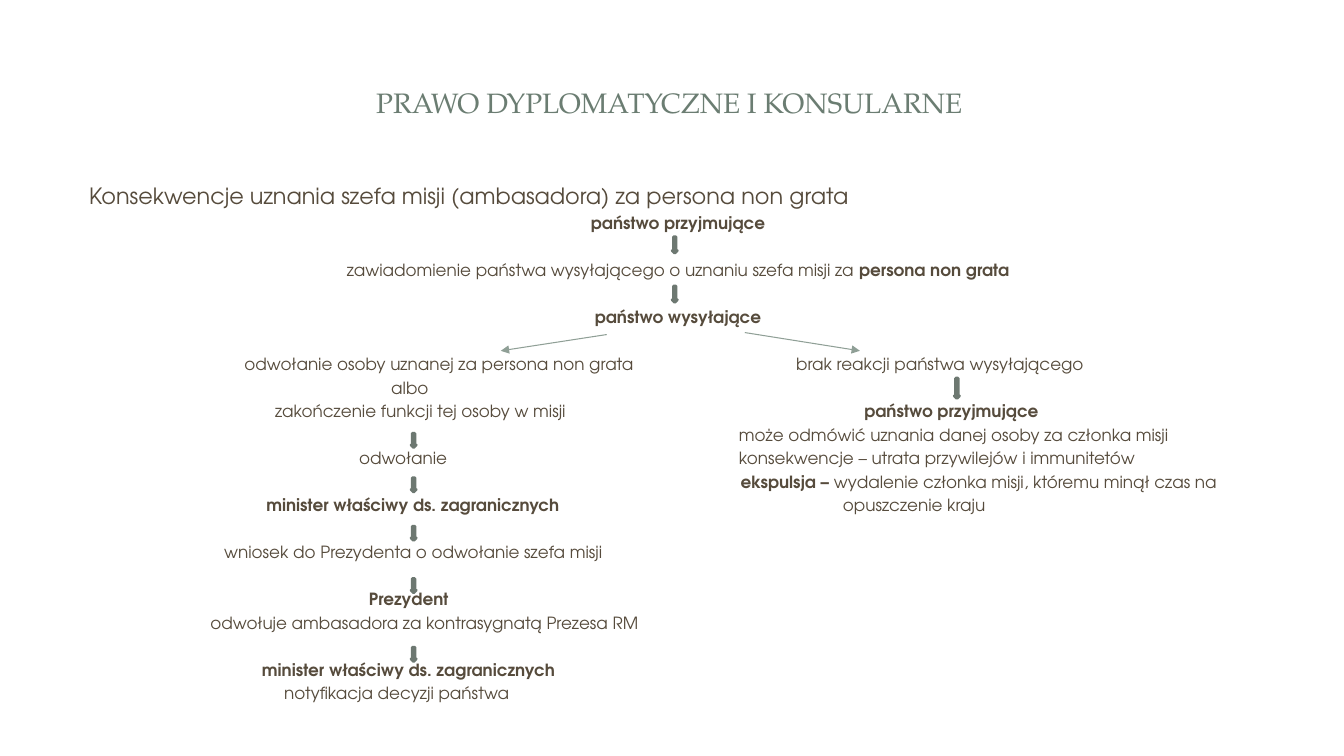
from lxml import etree
from pptx import Presentation
from pptx.dml.color import RGBColor
from pptx.enum.shapes import MSO_CONNECTOR, MSO_SHAPE
from pptx.enum.text import MSO_ANCHOR, PP_ALIGN
from pptx.oxml.ns import qn
from pptx.util import Cm, Pt

TITLE = RGBColor(0x6B, 0x7D, 0x72)
TEXT = RGBColor(0x56, 0x4B, 0x3C)
ARROW_FILL = RGBColor(0x93, 0xA2, 0x99)
ARROW_LINE = RGBColor(0x6D, 0x78, 0x71)
BRANCH = RGBColor(0x8F, 0x9F, 0x96)
HEADING_FONT = "TeX Gyre Pagella"
BODY_FONT = "TeX Gyre Adventor"

prs = Presentation()
prs.slide_width = Cm(33.87)
prs.slide_height = Cm(19.05)
s = prs.slides.add_slide(prs.slide_layouts[6])


def add_text(text, left, middle, width, height, size, font, color, align):
    sp = s.shapes.add_textbox(Cm(left), Cm(middle - height / 2), Cm(width), Cm(height))
    tf = sp.text_frame
    tf.word_wrap = True
    tf.vertical_anchor = MSO_ANCHOR.MIDDLE
    tf.margin_left = tf.margin_right = tf.margin_top = tf.margin_bottom = 0
    p = tf.paragraphs[0]
    p.alignment = align
    for i, part in enumerate(text.split("*")):
        if part:
            r = p.add_run()
            r.text = part
            r.font.size = Pt(size)
            r.font.name = font
            r.font.bold = i % 2 == 1
            r.font.color.rgb = color


add_text("PRAWO DYPLOMATYCZNE I KONSULARNE", 1.57, 2.59, 30.6, 2.9, 20,
         HEADING_FONT, TITLE, PP_ALIGN.CENTER)
add_text("Konsekwencje uznania szefa misji (ambasadora) za persona non grata",
         2.25, 4.94, 29, 0.7, 16, BODY_FONT, TEXT, PP_ALIGN.LEFT)

FIRST_ROW, ROW_PITCH = 5.61, 0.593
top_steps = [
    (0, 17.09, "*państwo przyjmujące*"),
    (2, 17.09, "zawiadomienie państwa wysyłającego o uznaniu szefa misji za *persona non grata*"),
    (4, 17.09, "*państwo wysyłające*"),
]
recall_steps = [
    (6, 11.07, "odwołanie osoby uznanej za persona non grata"),
    (7, 10.33, "albo"),
    (8, 10.6, "zakończenie funkcji tej osoby w misji"),
    (10, 10.16, "odwołanie"),
    (12, 10.41, "*minister właściwy ds. zagranicznych*"),
    (14, 10.42, "wniosek do Prezydenta o odwołanie szefa misji"),
    (16, 10.3, "*Prezydent*"),
    (17, 10.7, "odwołuje ambasadora za kontrasygnatą Prezesa RM"),
    (19, 10.3, "*minister właściwy ds. zagranicznych*"),
    (20, 10.0, "notyfikacja decyzji państwa"),
]
no_reaction_steps = [
    (6, 23.69, "brak reakcji państwa wysyłającego"),
    (8, 23.98, "*państwo przyjmujące*"),
    (9, 24.04, "może odmówić uznania danej osoby za członka misji"),
    (10, 23.62, "konsekwencje – utrata przywilejów i immunitetów"),
    (11, 24.67, "*ekspulsja – *wydalenie członka misji, któremu minął czas na"),
    (12, 23.04, "opuszczenie kraju"),
]
for steps, width in ((top_steps, 17.6), (recall_steps, 12.4), (no_reaction_steps, 12.4)):
    for row, center, text in steps:
        add_text(text, center - width / 2, FIRST_ROW + row * ROW_PITCH, width, 0.55,
                 12, BODY_FONT, TEXT, PP_ALIGN.CENTER)

down_arrows = [
    (16.94, 0.41, (5.97, 7.21)),
    (10.36, 0.36, (10.92, 12.04, 13.26, 14.58, 16.31)),
    (24.05, 0.51, (9.53,)),
]
for left, height, tops in down_arrows:
    for top in tops:
        sp = s.shapes.add_shape(MSO_SHAPE.DOWN_ARROW, Cm(left), Cm(top), Cm(0.13), Cm(height))
        sp.shadow.inherit = False
        sp.fill.solid()
        sp.fill.fore_color.rgb = ARROW_FILL
        sp.line.color.rgb = ARROW_LINE
        sp.line.width = Pt(2)

for x1, y1, x2, y2 in ((15.29, 8.43, 12.62, 8.84), (18.77, 8.38, 21.67, 8.84)):
    branch = s.shapes.add_connector(MSO_CONNECTOR.STRAIGHT, Cm(x1), Cm(y1), Cm(x2), Cm(y2))
    branch.line.color.rgb = BRANCH
    branch.line.width = Pt(0.75)
    etree.SubElement(branch.line._get_or_add_ln(), qn("a:tailEnd"), type="triangle")
    etree.SubElement(branch._element.spPr, qn("a:effectLst"))

prs.save("out.pptx")
